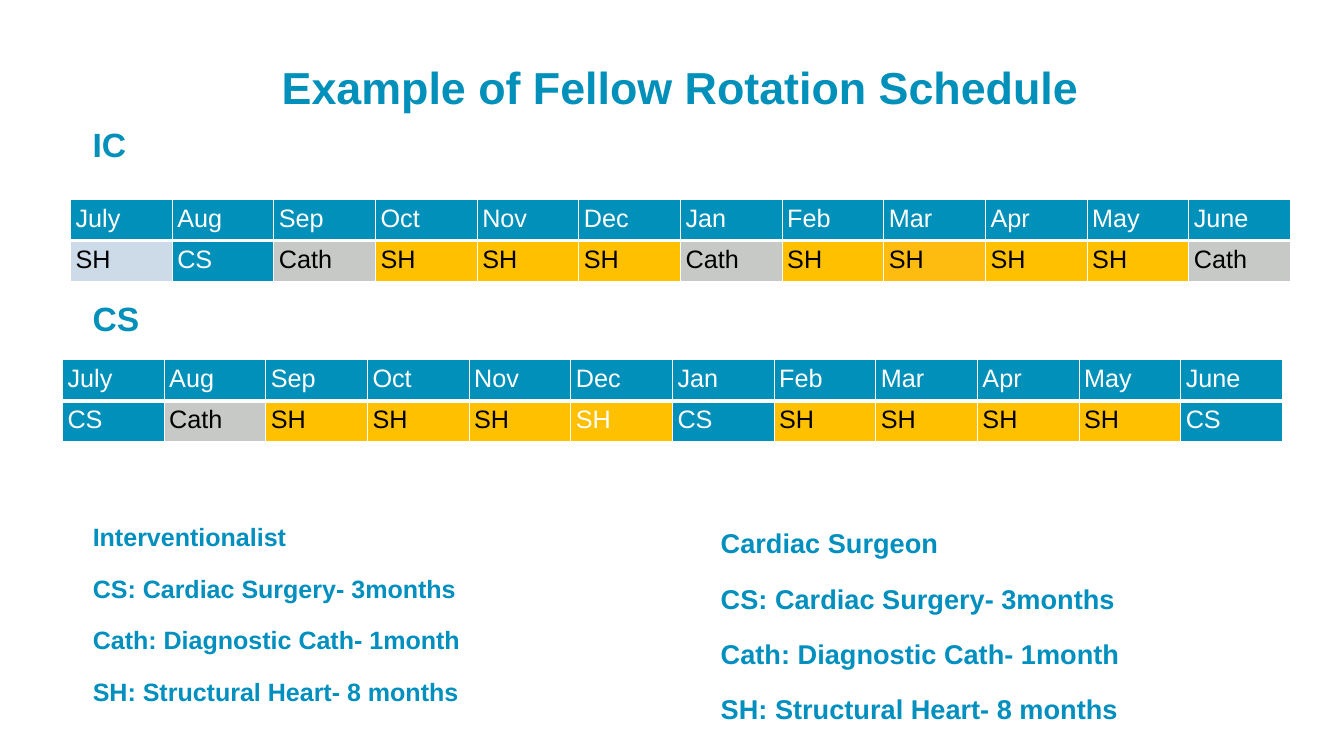
from pptx import Presentation
from pptx.dml.color import RGBColor as RGB
from pptx.enum.text import MSO_ANCHOR as Anchor, MSO_AUTO_SIZE as Fit, PP_ALIGN as Align
from pptx.oxml.ns import qn
from pptx.util import Inches, Pt
from lxml.etree import SubElement as Sub

BLUE, SKY, WHITE, BLACK = "0090BA", "008FBE", "FFFFFF", "000000"
GOLD, AMBER, GREY, PALE = "FFC000", "FEBC11", "C7C9C7", "CCDBE7"
MONTHS = "July Aug Sep Oct Nov Dec Jan Feb Mar Apr May June".split()
LOOK = {"CS": (BLUE, WHITE), "Cath": (GREY, BLACK), "SH": (GOLD, BLACK)}
DUTIES = [
    "CS: Cardiac Surgery- 3months",
    "Cath: Diagnostic Cath- 1month",
    "SH: Structural Heart- 8 months",
]


def hue(code):
    return RGB.from_string(code)


class Deck:
    """Holds the slide style and draws each kind of element."""

    def __init__(self):
        self.font = "Arial"
        self.prs = Presentation()
        self.prs.slide_width, self.prs.slide_height = Inches(13.33), Inches(7.5)
        self.slide = self.prs.slides.add_slide(self.prs.slide_layouts[1])

    def style(self, para, size, color, bold=False):
        for run in para.runs:
            font = run.font
            font.name, font.size, font.bold = self.font, Pt(size), bold
            font.color.rgb = hue(color)

    def place(self, shape, left, top, width, height):
        shape.left, shape.top = Inches(left), Inches(top)
        shape.width, shape.height = Inches(width), Inches(height)

    def box(self, *area):
        return self.slide.shapes.add_textbox(*map(Inches, area))

    def title(self, text, *area):
        shape = self.slide.shapes.title
        self.place(shape, *area)
        frame = shape.text_frame
        frame.text = text
        frame.auto_size, frame.vertical_anchor = Fit.NONE, Anchor.MIDDLE
        frame.paragraphs[0].alignment = Align.CENTER
        self.style(frame.paragraphs[0], 32, BLUE, True)

    def label(self, text, *area):
        frame = self.box(*area).text_frame
        frame.text = text
        frame.word_wrap, frame.auto_size = False, Fit.SHAPE_TO_FIT_TEXT
        self.style(frame.paragraphs[0], 24, BLUE, True)

    def roles(self, shape, lines, size, inset):
        frame = shape.text_frame
        frame.text = "\n".join(lines)
        frame.word_wrap, frame.auto_size = True, Fit.NONE
        frame.vertical_anchor, frame.margin_top = Anchor.TOP, Inches(inset)
        for i, para in enumerate(frame.paragraphs):
            props = para._p.get_or_add_pPr()
            props.set("marL", "0")
            props.set("indent", "0")
            Sub(props, qn("a:buNone"))
            para.line_spacing, para.space_before = 1.3, Pt(9.2 if i else 0)
            self.style(para, size, SKY, True)

    def edges(self, cell, base):
        props = cell._tc.get_or_add_tcPr()
        for i, (side, width) in enumerate(zip("LRTB", (1, 1, 1, base))):
            line = props.makeelement(qn(f"a:ln{side}"), {"w": str(Pt(width))})
            Sub(Sub(line, qn("a:solidFill")), qn("a:srgbClr"), val=WHITE)
            props.insert(i, line)

    def cell(self, cell, text, fill, color, base):
        cell.text = text
        cell.margin_left = cell.margin_right = Inches(0.05)
        cell.margin_top = cell.margin_bottom = Inches(0.05)
        cell.fill.solid()
        cell.fill.fore_color.rgb = hue(fill)
        self.edges(cell, base)
        self.style(cell.text_frame.paragraphs[0], 18, color)

    def rota(self, left, top, shifts, odd):
        area = map(Inches, (left, top, 12.1, 0.81))
        grid = self.slide.shapes.add_table(2, len(MONTHS), *area).table
        for i, (month, shift) in enumerate(zip(MONTHS, shifts.split())):
            self.cell(grid.cell(0, i), month, BLUE, WHITE, 3)
            fill, color = odd.get(month, LOOK[shift])
            self.cell(grid.cell(1, i), shift, fill, color, 1)


def main():
    deck = Deck()
    deck.title("Example of Fellow Rotation Schedule", 1, 0.52, 11.5, 0.67)
    body = deck.slide.placeholders[1]
    deck.place(body, 0.82, 4.52, 5.67, 2.6)
    deck.roles(body, ["Interventionalist"] + DUTIES, 17.9, 0.56)
    deck.rota(0.62, 3.57, "CS Cath SH SH SH SH CS SH SH SH SH CS",
              {"Dec": (GOLD, WHITE)})
    deck.rota(0.7, 1.98, "SH CS Cath SH SH SH Cath SH SH SH SH Cath",
              {"July": (PALE, BLACK), "Mar": (AMBER, BLACK)})
    side = deck.box(7.05, 4.52, 5.67, 2.74)
    deck.roles(side, ["Cardiac Surgeon"] + DUTIES, 19.4, 0.61)
    deck.label("IC", 0.82, 1.18, 0.54, 0.5)
    deck.label("CS", 0.82, 2.91, 0.67, 0.5)
    deck.prs.save("out.pptx")


if __name__ == "__main__":
    main()
